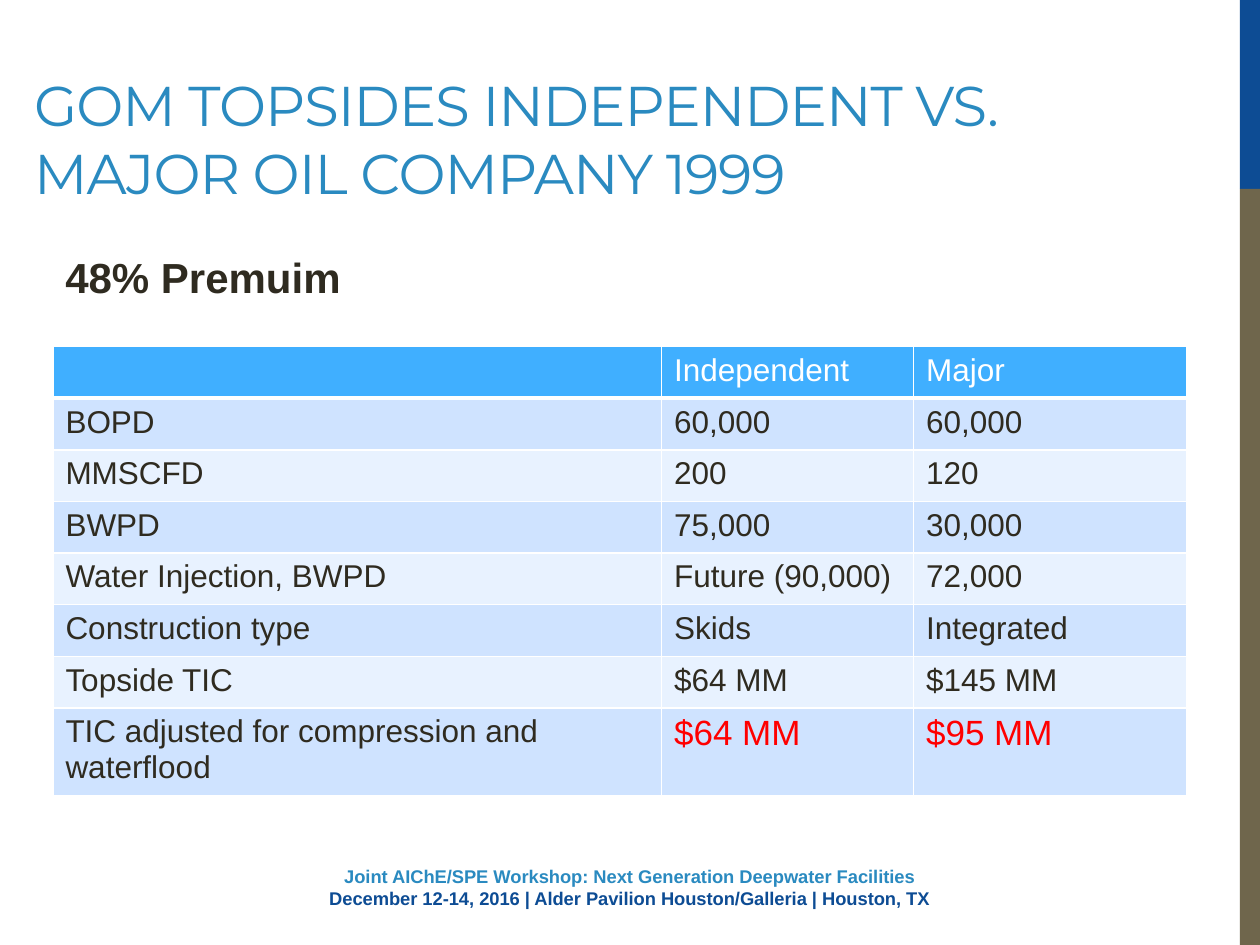
from lxml import etree
from pptx import Presentation
from pptx.dml.color import RGBColor
from pptx.enum import shapes, text
from pptx.oxml.ns import qn
from pptx.util import Inches, Pt

COLORS = {
    "navy": "0D4C94", "olive": "6F664C", "blue": "2A8AC0", "ink": "2F2B20",
    "header": "40AFFF", "band_dark": "CFE3FF", "band_light": "E8F2FF",
    "white": "FFFFFF", "red": "FF0000",
}

TITLE = "GOM TOPSIDES INDEPENDENT VS. MAJOR OIL COMPANY 1999"
PREMIUM = "48% Premuim"
FOOTER = [
    ("Joint AIChE/SPE Workshop: Next Generation Deepwater Facilities", "blue"),
    ("December 12-14, 2016 | Alder Pavilion Houston/Galleria | Houston, TX", "navy"),
]
COMPARISON = [
    ("", "Independent", "Major"),
    ("BOPD", "60,000", "60,000"),
    ("MMSCFD", "200", "120"),
    ("BWPD", "75,000", "30,000"),
    ("Water Injection, BWPD", "Future (90,000)", "72,000"),
    ("Construction type", "Skids", "Integrated"),
    ("Topside TIC", "$64 MM", "$145 MM"),
    ("TIC adjusted for compression and waterflood", "$64 MM", "$95 MM"),
]
COLUMN_WIDTHS = (4.83, 2, 2.17)
ROW_HEIGHT, LAST_ROW_HEIGHT = 0.41, 0.67
SIDE_BARS = [("navy", 0, 1.5), ("olive", 1.5, 6)]  # colour, top, height


def rgb(name):
    return RGBColor.from_string(COLORS[name])


def box(left, top, width, height):
    return [Inches(value) for value in (left, top, width, height)]


def format_font(font, color, size, name="Arial", bold=False):
    for key, value in {"name": name, "size": Pt(size), "bold": bold}.items():
        setattr(font, key, value)
    font.color.rgb = rgb(color)


def format_frame(frame, **settings):
    for key, value in {"word_wrap": True, **settings}.items():
        setattr(frame, key, value)


def set_borders(cell, bottom_width):
    properties = cell._tc.get_or_add_tcPr()
    widths = {"L": 1, "R": 1, "T": 1, "B": bottom_width}
    for index, (side, width) in enumerate(widths.items()):
        line = etree.Element(qn(f"a:ln{side}"), w=str(Pt(width)))
        fill = etree.SubElement(line, qn("a:solidFill"))
        etree.SubElement(fill, qn("a:srgbClr"), val=COLORS["white"])
        properties.insert(index, line)


prs = Presentation()
prs.slide_width, prs.slide_height = Inches(10), Inches(7.5)
slide = prs.slides.add_slide(prs.slide_layouts[5])

# Side bars
for color, top, height in SIDE_BARS:
    bar = slide.shapes.add_shape(
        shapes.MSO_SHAPE.RECTANGLE, *box(9.84, top, 0.16, height))
    bar.shadow.inherit = False
    bar.fill.solid()
    bar.fill.fore_color.rgb = rgb(color)
    bar.line.fill.background()

# Title
title = slide.shapes.title
title.left, title.top, title.width, title.height = box(0.17, -0.02, 9.42, 1.7)
format_frame(title.text_frame, text=TITLE, auto_size=text.MSO_AUTO_SIZE.NONE,
             vertical_anchor=text.MSO_ANCHOR.BOTTOM)
heading = title.text_frame.paragraphs[0]
heading.alignment = text.PP_ALIGN.LEFT
format_font(heading.runs[0].font, "blue", 32, "Montserrat")
heading.runs[0]._r.get_or_add_rPr().set("spc", "-60")

# Premium statement
premium = slide.shapes.add_textbox(*box(0.42, 1.95, 9, 0.6)).text_frame
format_frame(premium, text=PREMIUM)
format_font(premium.paragraphs[0].runs[0].font, "ink", 24, bold=True)

# Comparison table
table = slide.shapes.add_table(
    len(COMPARISON), len(COLUMN_WIDTHS),
    *box(0.42, 2.75, sum(COLUMN_WIDTHS),
         ROW_HEIGHT * (len(COMPARISON) - 1) + LAST_ROW_HEIGHT)).table
for column, width in zip(table.columns, COLUMN_WIDTHS):
    column.width = Inches(width)

last = len(COMPARISON) - 1
for r, values in enumerate(COMPARISON):
    table.rows[r].height = Inches(LAST_ROW_HEIGHT if r == last else ROW_HEIGHT)
    band = "header" if r == 0 else "band_dark" if r % 2 else "band_light"
    for c, value in enumerate(values):
        cell = table.cell(r, c)
        cell.text = value
        cell.fill.solid()
        cell.fill.fore_color.rgb = rgb(band)
        set_borders(cell, 3 if r == 0 else 1)
        adjusted_cost = r == last and c > 0
        color = "white" if r == 0 else "red" if adjusted_cost else "ink"
        format_font(cell.text_frame.paragraphs[0].font, color,
                    20 if adjusted_cost else 18)

# Workshop footer
footer = slide.shapes.add_textbox(*box(2.21, 6.82, 5.58, 0.45)).text_frame
format_frame(footer)
credit = footer.paragraphs[0]
credit.alignment = text.PP_ALIGN.CENTER
for index, (words, color) in enumerate(FOOTER):
    if index:
        credit.add_line_break()
    run = credit.add_run()
    run.text = words
    format_font(run.font, color, 10.5, bold=True)

prs.save("out.pptx")
